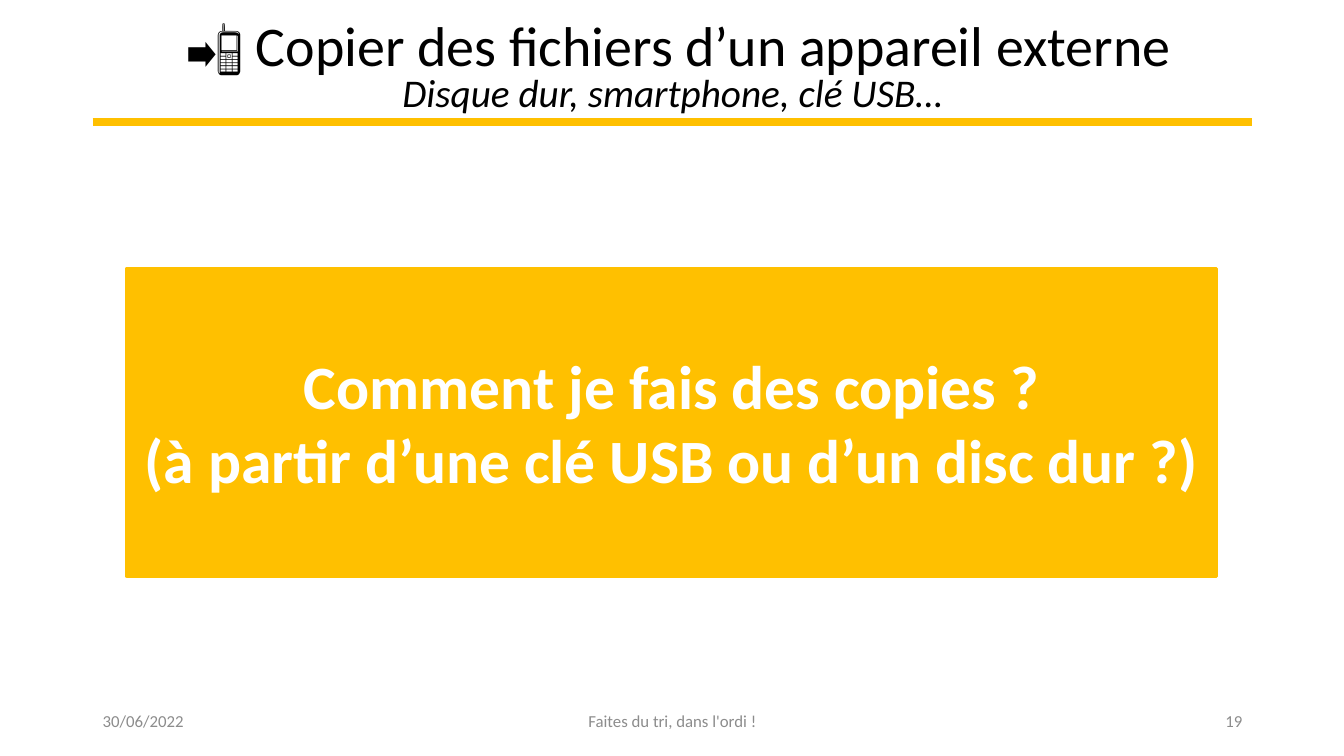
from pptx import Presentation
from pptx.dml.color import RGBColor as RGB
from pptx.enum.shapes import MSO_CONNECTOR as LINK, MSO_SHAPE as SHAPE
from pptx.enum.text import MSO_ANCHOR as ANCHOR, MSO_AUTO_SIZE as FIT, PP_ALIGN as ALIGN
from pptx.oxml.ns import qn
from pptx.util import Inches, Pt
from lxml import etree

GOLD = RGB(0xFF, 0xC0, 0x00)
BLACK = RGB(0x00, 0x00, 0x00)
WHITE = RGB(0xFF, 0xFF, 0xFF)
GREY = RGB(0x8C, 0x8C, 0x8C)
LEFT, WIDTH = 0.92, 11.5


def write(shape, lines, size, color, align=ALIGN.CENTER, space=1.0, bold=False, italic=False):
    """Fill a shape with lines of text in one style, centred vertically."""
    frame = shape.text_frame
    frame.text = "\n".join(lines)
    frame.word_wrap = True
    frame.auto_size = FIT.NONE
    frame.vertical_anchor = ANCHOR.MIDDLE
    for para in frame.paragraphs:
        para.alignment = align
        para.line_spacing = space
        for run in para.runs:
            font = run.font
            font.name, font.size = "Calibri", Pt(size)
            font.bold, font.italic = bold, italic
            font.color.rgb = color


def add_text(slide, left, top, width, height, text, size, color, **style):
    box = slide.shapes.add_textbox(Inches(left), Inches(top), Inches(width), Inches(height))
    write(box, [text], size, color, **style)


def add_header(slide, left, top, width, height):
    title = slide.shapes.title
    title.left, title.top = Inches(left), Inches(top)
    title.width, title.height = Inches(width), Inches(height)
    write(title, [" 📲 Copier des fichiers d’un appareil externe"], 40, BLACK, space=0.9)
    add_text(slide, left, top + 0.46, width, height, "Disque dur, smartphone, clé USB…",
             28, BLACK, space=0.9, italic=True)
    base = Inches(top + height)
    rule = slide.shapes.add_connector(LINK.STRAIGHT, Inches(left), base,
                                      Inches(left + width), base)
    rule.line.color.rgb = GOLD
    rule.line.width = Pt(6)
    etree.SubElement(rule._element.spPr, qn("a:effectLst"))


def add_panel(slide, left, top, width, height):
    panel = slide.shapes.add_shape(SHAPE.RECTANGLE, Inches(left), Inches(top),
                                   Inches(width), Inches(height))
    panel.shadow.inherit = False
    panel.fill.solid()
    panel.fill.fore_color.rgb = GOLD
    panel.line.color.rgb = GOLD
    panel.line.width = Pt(2.25)
    write(panel, ["Comment je fais des copies ?",
                  "(à partir d’une clé USB ou d’un disc dur ?)"], 44, WHITE, bold=True)


def add_footer(slide, left, top, width, height):
    side, mid = 3, 4.5
    parts = [
        (left, side, "30/06/2022", ALIGN.LEFT),
        (left + (width - mid) / 2, mid, "Faites du tri, dans l'ordi !", ALIGN.CENTER),
        (left + width - side, side, "19", ALIGN.RIGHT),
    ]
    for start, span, text, align in parts:
        add_text(slide, start, top, span, height, text, 12, GREY, align=align)


def main():
    deck = Presentation()
    deck.slide_width, deck.slide_height = Inches(13.33), Inches(7.5)
    slide = deck.slides.add_slide(deck.slide_layouts.get_by_name("Title Only"))
    add_header(slide, LEFT, -0.24, WIDTH, 1.45)
    add_panel(slide, 1.26, 2.66, 10.81, 3.06)
    add_footer(slide, LEFT, 6.95, WIDTH, 0.4)
    deck.save("out.pptx")


if __name__ == "__main__":
    main()
